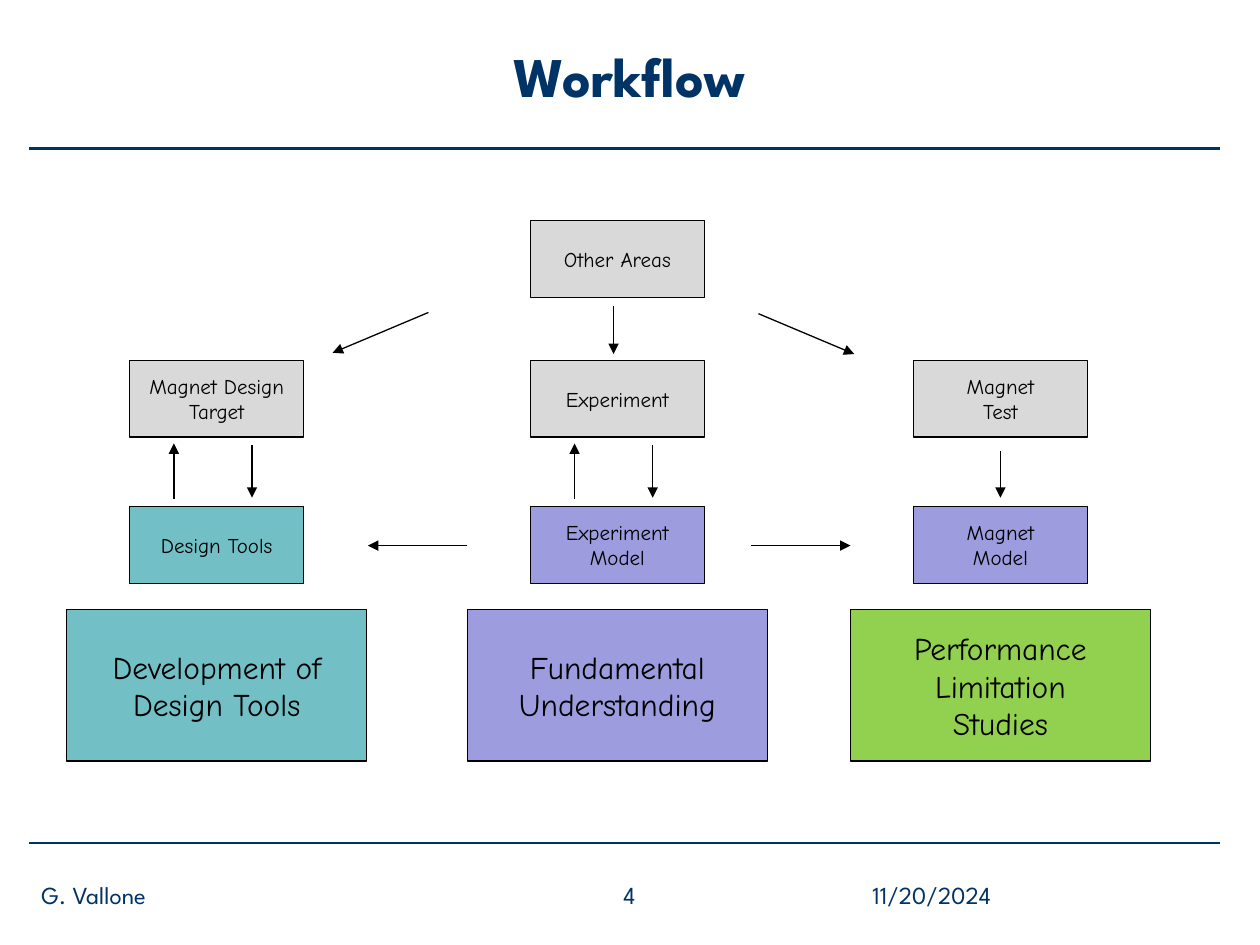
from pptx import Presentation, util as u
from pptx.dml.color import RGBColor
from pptx.enum import shapes, text
from pptx.oxml.ns import qn
from lxml import etree

# Content
TITLE = "Workflow"
NAVY, BLACK, GREY = "003366", "000000", "D9D9D9"
TEAL, VIOLET, GREEN = "72BFC5", "9C9CDF", "92D050"
HEAD_FONT, BODY_FONT = "League Spartan", "Comic Neue"

# Grid: column centres, and row name -> (top, width, height, text size)
COLS = [1.72, 4.9, 7.94]
ROWS = {
    "source": (1.75, 1.38, 0.61, 12),
    "activity": (2.86, 1.38, 0.61, 12),
    "model": (4.02, 1.38, 0.61, 12),
    "goal": (4.84, 2.38, 1.2, 18),
}
BOXES = [  # row, column, fill, text
    ("source", 1, GREY, "Other Areas"),
    ("activity", 0, GREY, "Magnet Design\nTarget"),
    ("activity", 1, GREY, "Experiment"),
    ("activity", 2, GREY, "Magnet\nTest"),
    ("model", 0, TEAL, "Design Tools"),
    ("model", 1, VIOLET, "Experiment\nModel"),
    ("model", 2, VIOLET, "Magnet\nModel"),
    ("goal", 0, TEAL, "Development of Design Tools"),
    ("goal", 1, VIOLET, "Fundamental Understanding"),
    ("goal", 2, GREEN, "Performance\nLimitation\nStudies"),
]
ARROWS = [  # from x, y, to x, y
    (3.4, 2.48, 2.64, 2.8),
    (4.87, 2.43, 4.87, 2.81),
    (6.02, 2.49, 6.78, 2.81),
    (7.94, 3.58, 7.94, 3.95),
    (3.71, 4.33, 2.92, 4.33),
    (5.96, 4.33, 6.75, 4.33),
]
# Up and down pairs between activity and model
for column in COLS[:2]:
    ARROWS += [(column - 0.34, 3.96, column - 0.34, 3.52),
               (column + 0.28, 3.53, column + 0.28, 3.95)]
RULES = [1.18, 6.69]
FOOTER = [  # left, width, alignment, text
    (0.23, 3.17, "LEFT", "G. Vallone"),
    (3.83, 2.33, "CENTER", "4"),
    (6.23, 2.33, "CENTER", "11/20/2024"),
]


def rgb(value):
    return RGBColor.from_string(value)


def write(sp, content, size, font, color, align="CENTER", bold=False):
    tf = sp.text_frame
    tf.text = content
    tf.word_wrap = True
    tf.vertical_anchor = text.MSO_ANCHOR.MIDDLE
    for p in tf.paragraphs:
        p.alignment = getattr(text.PP_ALIGN, align)
        for r in p.runs:
            for key, value in dict(size=u.Pt(size), name=font, bold=bold).items():
                setattr(r.font, key, value)
            r.font.color.rgb = rgb(color)


def add_line(s, ends, color, width, arrow=False):
    line = s.shapes.add_connector(shapes.MSO_CONNECTOR.STRAIGHT, *map(u.Inches, ends))
    line.line.color.rgb = rgb(color)
    line.line.width = u.Pt(width)
    if arrow:
        etree.SubElement(line.line._get_or_add_ln(), qn("a:tailEnd"), type="triangle")
    etree.SubElement(line._element.spPr, qn("a:effectLst"))


def add_box(s, row, column, fill, content):
    top, width, height, size = ROWS[row]
    place = COLS[column] - width / 2, top, width, height
    sp = s.shapes.add_shape(shapes.MSO_SHAPE.RECTANGLE, *map(u.Inches, place))
    sp.shadow.inherit = False
    sp.fill.solid()
    sp.fill.fore_color.rgb = rgb(fill)
    sp.line.color.rgb = rgb(BLACK)
    sp.line.width = u.Pt(0.75)
    write(sp, content, size, BODY_FONT, BLACK)


def main():
    prs = Presentation()
    prs.slide_width, prs.slide_height = u.Inches(10), u.Inches(7.5)
    s = prs.slides.add_slide(prs.slide_layouts[5])

    # Title and rules
    title = s.shapes.title
    for key, value in dict(left=0.74, top=0.2, width=8.51, height=0.79).items():
        setattr(title, key, u.Inches(value))
    write(title, TITLE, 32, HEAD_FONT, NAVY, bold=True)
    for y in RULES:
        add_line(s, (0.23, y, 9.68, y), NAVY, 1.5)

    # Diagram
    for box in BOXES:
        add_box(s, *box)
    for ends in ARROWS:
        add_line(s, ends, BLACK, 0.75, arrow=True)

    # Footer
    for left, width, align, content in FOOTER:
        sp = s.shapes.add_textbox(*map(u.Inches, (left, 6.9, width, 0.4)))
        write(sp, content, 14, HEAD_FONT, NAVY, align)

    prs.save("out.pptx")


if __name__ == "__main__":
    main()
